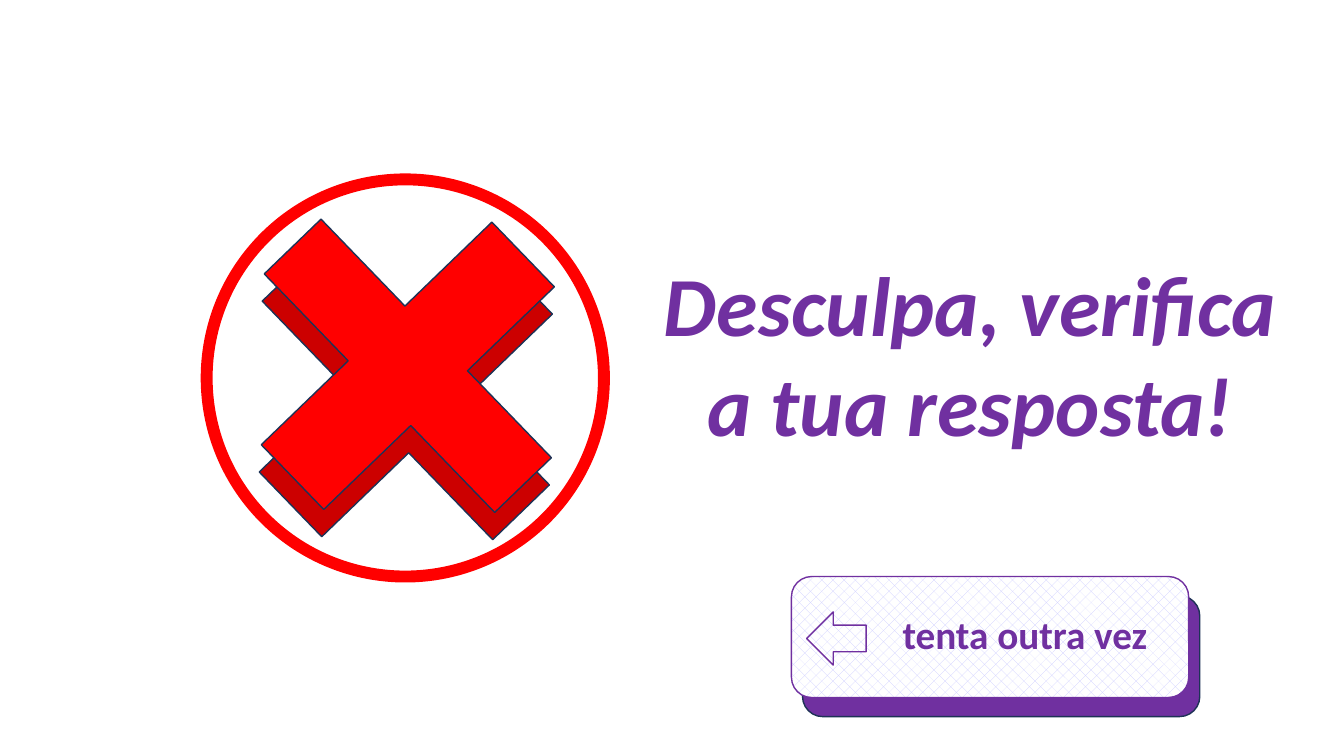
from pptx import Presentation
from pptx.dml.color import RGBColor
from pptx.enum.dml import MSO_PATTERN as Pat
from pptx.enum.shapes import MSO_SHAPE as Form
from pptx.enum.text import MSO_ANCHOR as Anchor, MSO_AUTO_SIZE as Fit, PP_ALIGN as Align
from pptx.util import Inches, Pt

HUES = {"violet": "7030A0", "red": "FF0000", "dark": "CC0000",
        "navy": "1E3256", "lilac": "CCCCFF", "white": "FFFFFF"}


def hue(name):
    """Return the named colour."""
    return RGBColor.from_string(HUES[name])


def write(shape, text, size, italic=False, left=0.1, gap=1.0):
    """Set centred bold violet text in a shape."""
    frame = shape.text_frame
    frame.word_wrap = True
    frame.auto_size = Fit.NONE
    frame.vertical_anchor = Anchor.MIDDLE
    frame.margin_left = Inches(left)
    frame.text = text
    line = frame.paragraphs[0]
    line.alignment = Align.CENTER
    line.line_spacing = gap
    font = line.runs[0].font
    font.name, font.size = "Calibri", Pt(size)
    font.bold, font.italic = True, italic
    font.color.rgb = hue("violet")


def draw(slide, form, box, line, fill=None, width=1):
    """Add a preset shape without shadow in a box given in inches."""
    shape = slide.shapes.add_shape(form, *map(Inches, box))
    shape.shadow.inherit = False
    if fill:
        shape.fill.solid()
        shape.fill.fore_color.rgb = hue(fill)
    else:
        shape.fill.background()
    shape.line.color.rgb = hue(line)
    shape.line.width = Pt(width)
    return shape


def title(slide, box):
    """Place the message in the title placeholder."""
    head = slide.shapes.title
    head.left, head.top, head.width, head.height = map(Inches, box)
    write(head, "Desculpa, verifica a tua resposta!", 60, italic=True)


def cross(slide, box):
    """Draw a ring with a raised cross inside the box."""
    x, y, w, h = box
    draw(slide, Form.FLOWCHART_CONNECTOR, box, "red", width=8.5)
    for dx, dy, fill in ((0.33, 0.53, "dark"), (0.35, 0.26, "red")):
        part = (x + dx, y + dy, w * 0.835, h * 0.807)
        plus = draw(slide, Form.CROSS, part, "navy", fill)
        plus.adjustments[0] = 0.377
        plus.rotation = 46


def button(slide, box):
    """Draw a raised button with a label and a back arrow."""
    x, y, w, h = box
    draw(slide, Form.ROUNDED_RECTANGLE, (x + 0.11, y + 0.19, w, h), "navy", "violet")
    face = draw(slide, Form.ROUNDED_RECTANGLE, box, "violet")
    face.fill.patterned()
    face.fill.pattern = Pat.PERCENT_25
    face.fill.fore_color.rgb = hue("lilac")
    face.fill.back_color.rgb = hue("white")
    write(face, "tenta outra vez", 28, left=0.79, gap=0.9)
    draw(slide, Form.LEFT_ARROW, (x + 0.15, y + 0.35, w * 0.15, h * 0.44), "violet")


def main():
    """Build and save the slide."""
    deck = Presentation()
    deck.slide_width, deck.slide_height = Inches(13.33), Inches(7.5)
    slide = deck.slides.add_slide(deck.slide_layouts[5])
    title(slide, (6.33, 2.44, 6.58, 2.12))
    cross(slide, (2.05, 1.78, 3.94, 3.94))
    button(slide, (7.85, 5.72, 3.94, 1.2))
    deck.save("out.pptx")


if __name__ == "__main__":
    main()
